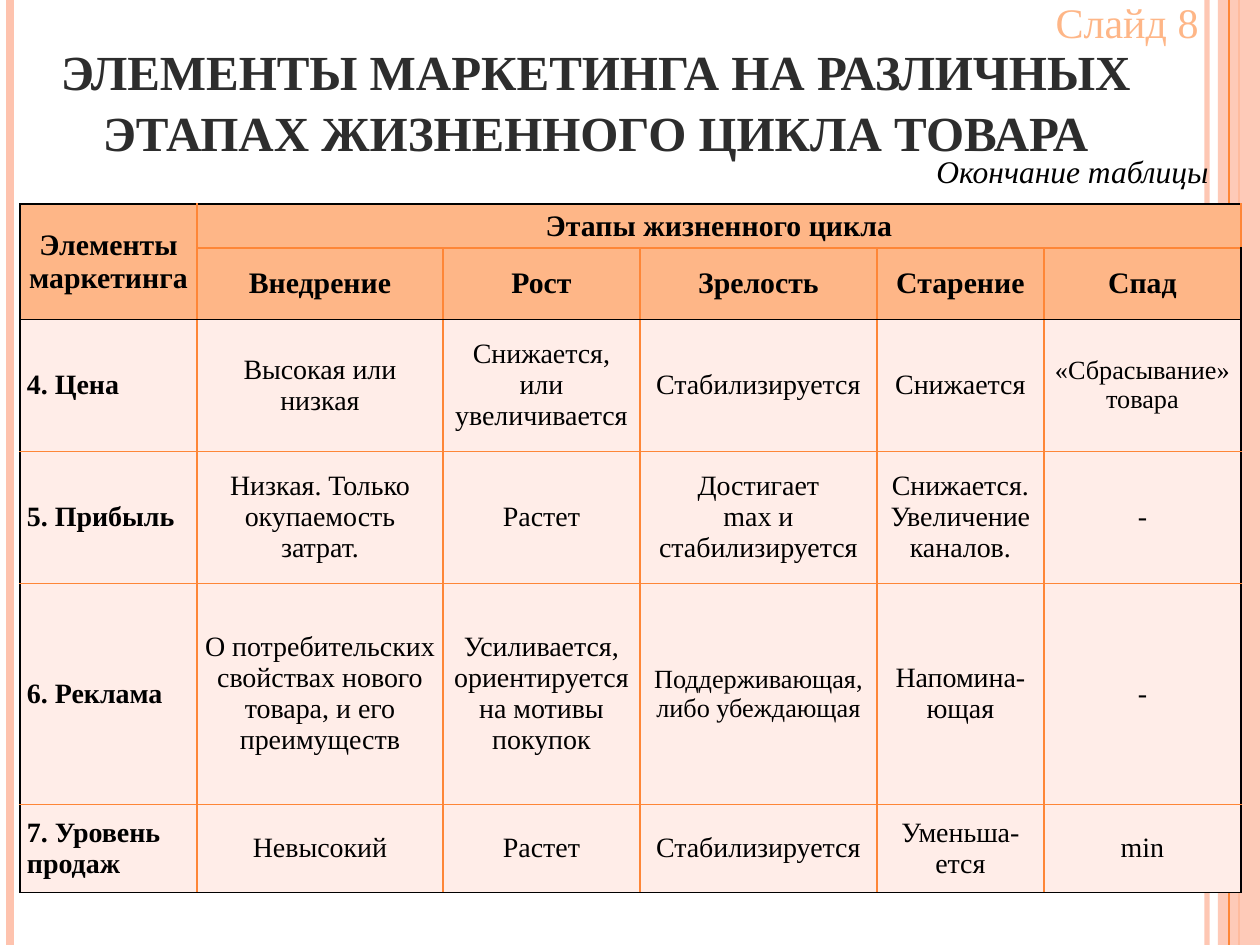
"""Build a slide with a table of marketing elements across product life-cycle stages."""
from dataclasses import dataclass
from typing import Optional

from lxml.etree import SubElement
from pptx import Presentation
from pptx.dml.color import RGBColor
from pptx.enum.shapes import MSO_CONNECTOR as CONN, MSO_SHAPE as SHAPE
from pptx.enum.text import MSO_ANCHOR as ANCHOR, PP_ALIGN as ALIGN
from pptx.oxml.ns import qn
from pptx.util import Emu, Pt

PX = 914400 / 126
W, H = 1260, 945
FONT = "Times New Roman"
BLACK, ORANGE, PEACH, PINK, CREAM = "000000", "FE8637", "FEB687", "FEC3AE", "FFEDE8"


@dataclass
class Stripe:
    x: int
    color: str
    width: float
    alpha: Optional[int] = None


@dataclass
class Label:
    text: str
    box: tuple[int, int, int, int]
    size: int
    color: str
    align: ALIGN = ALIGN.RIGHT
    anchor: ANCHOR = ANCHOR.TOP
    bold: bool = False
    italic: bool = False
    spacing: Optional[int] = None


@dataclass
class Entry:
    text: str
    size: int = 16
    bold: bool = False
    align: ALIGN = ALIGN.CENTER
    fill: str = CREAM


STRIPES = [Stripe(1207, PINK, 3, 93), Stripe(10, PINK, 4.5), Stripe(1239, ORANGE, 1.5)]
THIN_STRIPE = Stripe(1229, ORANGE, 0.75)
TITLE = Label("ЭЛЕМЕНТЫ МАРКЕТИНГА НА РАЗЛИЧНЫХ ЭТАПАХ ЖИЗНЕННОГО ЦИКЛА ТОВАРА",
              (0, 10, 1191, 158), 28, "2D2D2D", ALIGN.CENTER, ANCHOR.BOTTOM,
              bold=True, spacing=35)
NUMBER = Label("Слайд 8", (974, -10, 237, 64), 24, PEACH)
CAPTION = Label("Окончание таблицы", (867, 146, 354, 50), 18, BLACK, italic=True)

COLS = [177, 246, 197, 237, 167, 197]
ROWS = [44, 44, 132, 132, 221, 88]
HEADER = [
    ["Элементы маркетинга", "Этапы жизненного цикла", "", "", "", ""],
    ["", "Внедрение", "Рост", "Зрелость", "Старение", "Спад"],
]
BODY = [
    ["4. Цена", "Высокая или низкая", "Снижается, или увеличивается",
     "Стабилизируется", "Снижается", Entry("«Сбрасывание» товара", 15)],
    ["5. Прибыль", "Низкая. Только\nокупаемость\nзатрат.", "Растет",
     "Достигает\nmax и\nстабилизируется", "Снижается. Увеличение каналов.", "-"],
    ["6. Реклама", "О потребительских свойствах нового товара, и его преимуществ",
     "Усиливается, ориентируется на мотивы покупок",
     Entry("Поддерживающая, либо убеждающая", 15), "Напомина-ющая", "-"],
    ["7. Уровень продаж", "Невысокий", "Растет", "Стабилизируется",
     "Уменьша-ется", "min"],
]


def px(n: int) -> Emu:
    return Emu(round(n * PX))


def rgb(color: str) -> RGBColor:
    return RGBColor.from_string(color)


def set_alpha(fill_parent, percent: int) -> None:
    clr = next(fill_parent.iter(qn("a:srgbClr")))
    SubElement(clr, qn("a:alpha"), val=str(percent * 1000))


def draw_stripe(s, stripe: Stripe) -> None:
    ln = s.shapes.add_connector(CONN.STRAIGHT, px(stripe.x), 0, px(stripe.x), px(H))
    ln.line.color.rgb = rgb(stripe.color)
    ln.line.width = Pt(stripe.width)
    sp_pr = ln._element.spPr
    if stripe.alpha:
        set_alpha(sp_pr, stripe.alpha)
    SubElement(sp_pr, qn("a:effectLst"))


def draw_band(s) -> None:
    sp = s.shapes.add_shape(SHAPE.RECTANGLE, px(1218), 0, px(W - 1218), px(H))
    sp.shadow.inherit = False
    sp.fill.solid()
    sp.fill.fore_color.rgb = rgb(PINK)
    sp.line.fill.background()
    set_alpha(sp._element.spPr, 87)


def style_paragraph(p, size: int, color: str, align: ALIGN, bold: bool, italic=False) -> None:
    p.alignment = align
    f = p.font
    f.name, f.size, f.bold, f.italic = FONT, Pt(size), bold, italic
    f.color.rgb = rgb(color)


def draw_label(s, label: Label) -> None:
    tf = s.shapes.add_textbox(*map(px, label.box)).text_frame
    tf.word_wrap = True
    tf.vertical_anchor = label.anchor
    p = tf.paragraphs[0]
    p.text = label.text
    style_paragraph(p, label.size, label.color, label.align, label.bold, label.italic)
    if label.spacing:
        p.line_spacing = Pt(label.spacing)


def set_borders(cell, r: int, c: int) -> None:
    black = {
        "L": c == 0,
        "R": c == len(COLS) - 1,
        "T": r in (0, len(HEADER)),
        "B": r in (len(HEADER) - 1, len(ROWS) - 1),
    }
    tc_pr = cell._tc.get_or_add_tcPr()
    for i, (side, is_black) in enumerate(black.items()):
        ln = tc_pr.makeelement(qn(f"a:ln{side}"), {"w": str(Pt(1))})
        fill = SubElement(ln, qn("a:solidFill"))
        SubElement(fill, qn("a:srgbClr"), val=BLACK if is_black else ORANGE)
        tc_pr.insert(i, ln)


def fill_cell(cell, entry: Entry) -> None:
    cell.fill.solid()
    cell.fill.fore_color.rgb = rgb(entry.fill)
    cell.vertical_anchor = ANCHOR.MIDDLE
    cell.margin_left = cell.margin_right = px(7)
    cell.margin_top = cell.margin_bottom = 0
    cell.text_frame.text = entry.text
    for p in cell.text_frame.paragraphs:
        style_paragraph(p, entry.size, BLACK, entry.align, entry.bold)


def to_entry(value, r: int, c: int) -> Entry:
    if isinstance(value, Entry):
        return value
    if r < len(HEADER):
        return Entry(value, 17, True, fill=PEACH)
    return Entry(value, bold=True, align=ALIGN.LEFT) if c == 0 else Entry(value)


def draw_table(s) -> None:
    frame = s.shapes.add_table(len(ROWS), len(COLS), px(20), px(204),
                               px(sum(COLS)), px(sum(ROWS)))
    tbl = frame.table
    tbl.first_row = tbl.horz_banding = False
    for col, width in zip(tbl.columns, COLS):
        col.width = px(width)
    for row, height in zip(tbl.rows, ROWS):
        row.height = px(height)
    for r, values in enumerate(HEADER + BODY):
        for c, value in enumerate(values):
            fill_cell(tbl.cell(r, c), to_entry(value, r, c))
            set_borders(tbl.cell(r, c), r, c)
    tbl.cell(0, 0).merge(tbl.cell(1, 0))
    tbl.cell(0, 1).merge(tbl.cell(0, len(COLS) - 1))


def main() -> None:
    prs = Presentation()
    prs.slide_width, prs.slide_height = px(W), px(H)
    s = prs.slides.add_slide(prs.slide_layouts[6])
    for stripe in STRIPES:
        draw_stripe(s, stripe)
    draw_band(s)
    draw_stripe(s, THIN_STRIPE)
    draw_label(s, TITLE)
    draw_label(s, NUMBER)
    draw_table(s)
    draw_label(s, CAPTION)
    prs.save("out.pptx")


if __name__ == "__main__":
    main()
